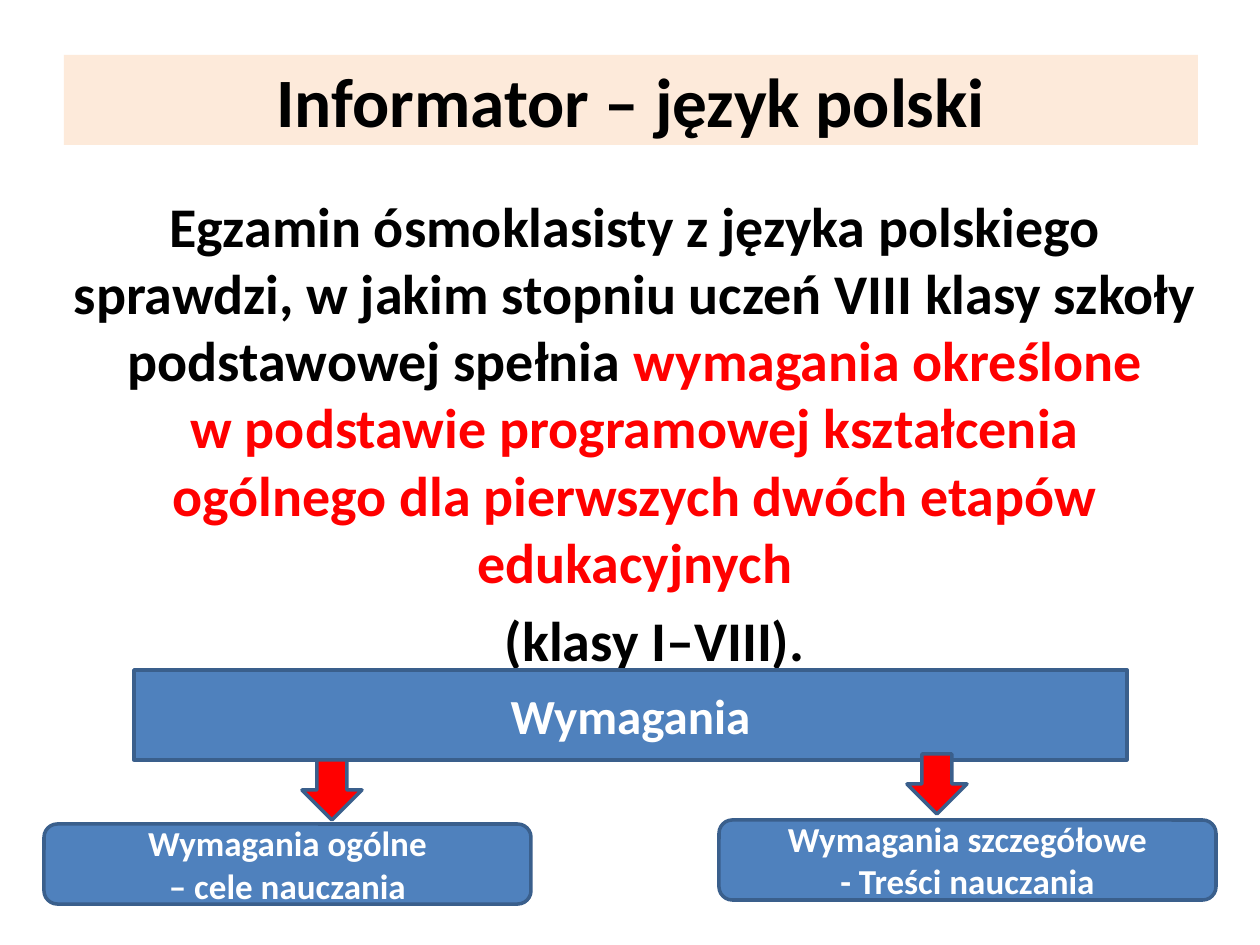
from dataclasses import dataclass

from pptx import Presentation
from pptx.dml.color import RGBColor
from pptx.enum.shapes import MSO_SHAPE
from pptx.enum.text import MSO_ANCHOR, PP_ALIGN
from pptx.util import Emu, Pt

PX_PER_INCH = 126


@dataclass(frozen=True)
class Theme:
    font: str = "Calibri"
    black: str = "000000"
    white: str = "FFFFFF"
    red: str = "FF0000"
    blue: str = "4F81BD"
    outline: str = "3A5F8C"
    peach: str = "FDEADA"
    title_size: float = 39.6
    body_size: float = 32
    heading_size: float = 28
    label_size: float = 20
    body_spacing: float = 6.4
    line_width: float = 2


THEME = Theme()


def px(value):
    return Emu(round(value * 914400 / PX_PER_INCH))


def add_run(paragraph, text, size, color):
    run = paragraph.add_run()
    run.text = text
    run.font.name = THEME.font
    run.font.size = Pt(size)
    run.font.bold = True
    run.font.color.rgb = RGBColor.from_string(color)


def add_paragraph(frame, first):
    paragraph = frame.paragraphs[0] if first else frame.add_paragraph()
    paragraph.alignment = PP_ALIGN.CENTER
    return paragraph


def add_block(slide, kind, box, fill, outline=None):
    shape = slide.shapes.add_shape(kind, *map(px, box))
    shape.shadow.inherit = False
    shape.fill.solid()
    shape.fill.fore_color.rgb = RGBColor.from_string(fill)
    if outline:
        shape.line.color.rgb = RGBColor.from_string(outline)
        shape.line.width = Pt(THEME.line_width)
    else:
        shape.line.fill.background()
    return shape


def add_label(shape, lines, size, color):
    frame = shape.text_frame
    frame.word_wrap = True
    frame.vertical_anchor = MSO_ANCHOR.MIDDLE
    for index, line in enumerate(lines):
        add_run(add_paragraph(frame, index == 0), line, size, color)


def add_body(slide, box):
    frame = slide.shapes.add_textbox(*map(px, box)).text_frame
    frame.word_wrap = True
    statement = add_paragraph(frame, True)
    add_run(statement, "Egzamin ósmoklasisty z języka polskiego sprawdzi, w jakim stopniu "
            "uczeń VIII klasy szkoły podstawowej spełnia ", THEME.body_size, THEME.black)
    add_run(statement, "wymagania określone", THEME.body_size, THEME.red)
    for line in ("w podstawie programowej kształcenia",
                 "ogólnego dla pierwszych dwóch etapów edukacyjnych"):
        statement.add_line_break()
        add_run(statement, line, THEME.body_size, THEME.red)
    classes = add_paragraph(frame, False)
    classes._p.get_or_add_pPr().set("marL", str(px(40)))
    add_run(classes, "(klasy I–VIII).", THEME.body_size, THEME.black)
    for paragraph in frame.paragraphs:
        paragraph.space_before = Pt(THEME.body_spacing)


def main():
    presentation = Presentation()
    presentation.slide_width = px(1260)
    presentation.slide_height = px(945)
    slide = presentation.slides.add_slide(presentation.slide_layouts[6])

    title = add_block(slide, MSO_SHAPE.RECTANGLE, (64, 55, 1134, 90), THEME.peach)
    add_label(title, ["Informator – język polski"], THEME.title_size, THEME.black)
    add_body(slide, (44, 185, 1182, 446))

    heading = add_block(slide, MSO_SHAPE.RECTANGLE, (134, 670, 993, 90),
                        THEME.blue, THEME.outline)
    add_label(heading, ["Wymagania"], THEME.heading_size, THEME.white)

    requirements = [
        ((44, 824, 487, 80), ["Wymagania ogólne", "– cele nauczania"]),
        ((719, 820, 497, 80), ["Wymagania szczegółowe", "- Treści nauczania"]),
    ]
    for box, lines in requirements:
        block = add_block(slide, MSO_SHAPE.ROUNDED_RECTANGLE, box, THEME.blue, THEME.outline)
        add_label(block, lines, THEME.label_size, THEME.white)

    for left, top in ((302, 760), (907, 754)):
        add_block(slide, MSO_SHAPE.DOWN_ARROW, (left, top, 60, 60), THEME.red, THEME.outline)

    presentation.save("out.pptx")


if __name__ == "__main__":
    main()
